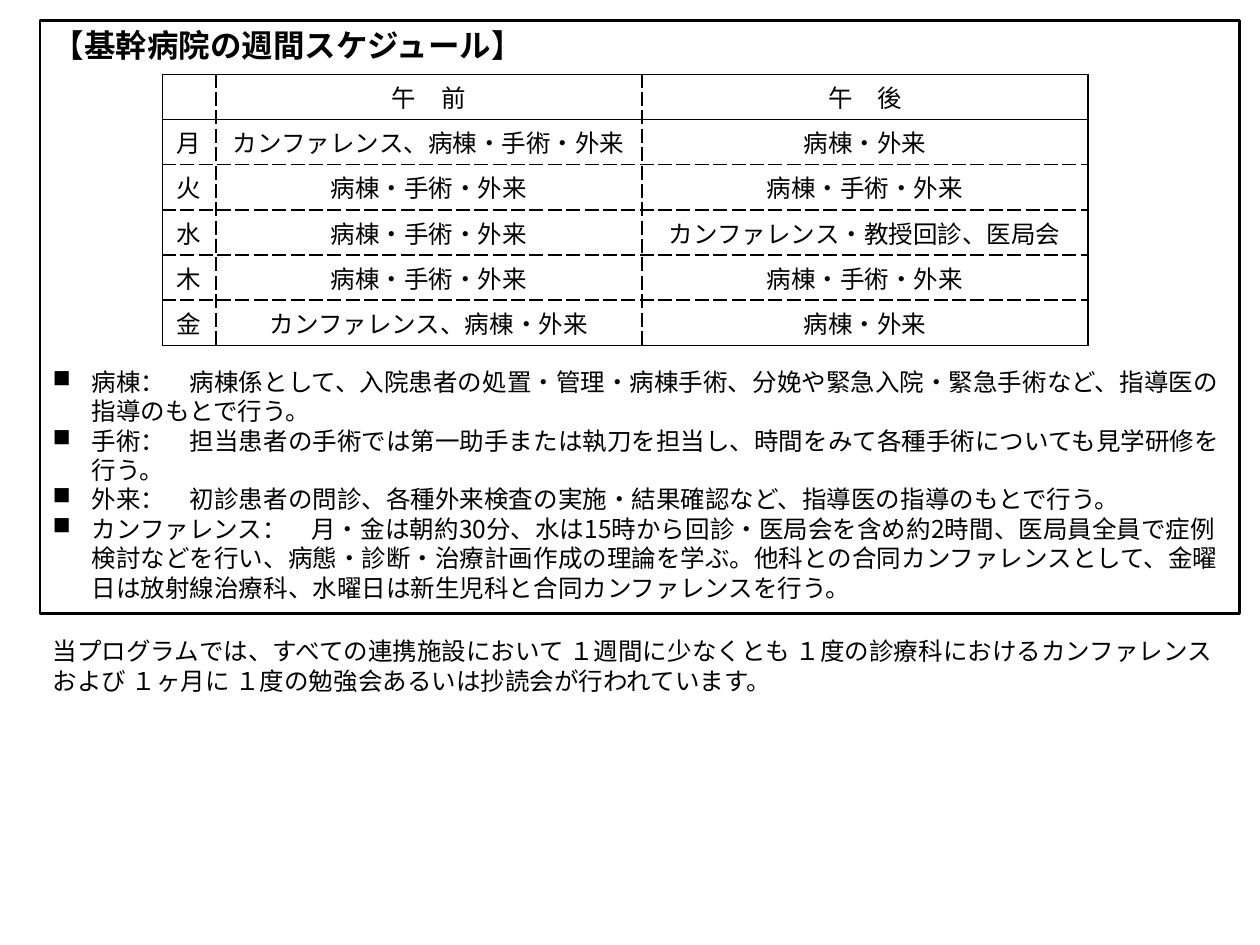
from lxml.etree import SubElement
from pptx import Presentation
from pptx.dml.color import RGBColor
from pptx.enum.shapes import MSO_SHAPE
from pptx.enum.text import MSO_ANCHOR as Anchor, PP_ALIGN as Align
from pptx.oxml.ns import qn
from pptx.util import Cm, Pt

TITLE = "【基幹病院の週間スケジュール】"
SCHEDULE = [
    ("", "午　前", "午　後"),
    ("月", "カンファレンス、病棟・手術・外来", "病棟・外来"),
    ("火", "病棟・手術・外来", "病棟・手術・外来"),
    ("水", "病棟・手術・外来", "カンファレンス・教授回診、医局会"),
    ("木", "病棟・手術・外来", "病棟・手術・外来"),
    ("金", "カンファレンス、病棟・外来", "病棟・外来"),
]
DUTIES = [
    "病棟：　病棟係として、入院患者の処置・管理・病棟手術、分娩や緊急入院・緊急手術など、指導医の指導のもとで行う。",
    "手術：　担当患者の手術では第一助手または執刀を担当し、時間をみて各種手術についても見学研修を行う。",
    "外来：　初診患者の問診、各種外来検査の実施・結果確認など、指導医の指導のもとで行う。",
    "カンファレンス：　月・金は朝約30分、水は15時から回診・医局会を含め約2時間、医局員全員で症例検討などを行い、"
    "病態・診断・治療計画作成の理論を学ぶ。他科との合同カンファレンスとして、金曜日は放射線治療科、"
    "水曜日は新生児科と合同カンファレンスを行う。",
]
CLOSING = (
    "当プログラムでは、すべての連携施設において １週間に少なくとも １度の診療科におけるカンファレンスおよび "
    "１ヶ月に １度の勉強会あるいは抄読会が行われています。"
)

COLORS = {"ink": "000000"}
FONT = "Noto Sans CJK JP"
LEFT, WIDTH = Cm(0.81), Cm(24.18)
COLUMN_WIDTHS = [Cm(1.07), Cm(8.59), Cm(8.99)]
ROW_HEIGHT = Cm(0.91)
INDENT = Cm(0.79)
TITLE_LINE, BODY_LINE = Pt(21.6), Pt(16.8)
TABLE_GAP = 8 * TITLE_LINE

FRAME_FORMAT = {"word_wrap": True, "vertical_anchor": Anchor.TOP}
CELL_FORMAT = {
    "margin_left": Cm(0.18),
    "margin_right": Cm(0.18),
    "margin_top": 0,
    "margin_bottom": 0,
    "vertical_anchor": Anchor.MIDDLE,
}
TITLE_FONT = {"name": FONT, "size": Pt(18), "bold": True}
BODY_FONT = {"name": FONT, "size": Pt(14), "bold": False}


def apply(target, values):
    for name, value in values.items():
        setattr(target, name, value)


def write(paragraph, text, font, **layout):
    apply(paragraph, {"alignment": Align.LEFT, **layout})
    apply(paragraph.font, font)
    if text:
        run = paragraph.add_run()
        run.text = text
        apply(run.font, font)
        run.font.color.rgb = RGBColor.from_string(COLORS["ink"])
        SubElement(run.font._element, qn("a:ea"), typeface=FONT)


def add_bullet(paragraph):
    properties = paragraph._p.get_or_add_pPr()
    properties.set("marL", str(INDENT))
    properties.set("indent", str(-INDENT))
    bullet = SubElement(properties, qn("a:buChar"), char="■")
    default = properties.find(qn("a:defRPr"))
    if default is not None:
        default.addprevious(bullet)


def add_border(cell, side, dash):
    line = SubElement(cell._tc.get_or_add_tcPr(), qn(f"a:ln{side}"), w=str(Pt(1)))
    fill = SubElement(line, qn("a:solidFill"))
    SubElement(fill, qn("a:srgbClr"), val=COLORS["ink"])
    SubElement(line, qn("a:prstDash"), val=dash)


def add_schedule_box(slide):
    box = slide.shapes.add_shape(MSO_SHAPE.RECTANGLE, LEFT, Cm(0.41), WIDTH, Cm(11.96))
    box.shadow.inherit = False
    box.fill.background()
    box.line.color.rgb = RGBColor.from_string(COLORS["ink"])
    box.line.width = Pt(1.5)
    frame = box.text_frame
    apply(frame, FRAME_FORMAT)
    write(frame.paragraphs[0], TITLE, TITLE_FONT, line_spacing=TITLE_LINE)
    for index, duty in enumerate(DUTIES):
        paragraph = frame.add_paragraph()
        gap = Pt(0) if index else TABLE_GAP
        write(paragraph, duty, BODY_FONT, line_spacing=BODY_LINE, space_before=gap)
        add_bullet(paragraph)


def add_schedule_table(slide):
    last_row, last_column = len(SCHEDULE) - 1, len(COLUMN_WIDTHS) - 1
    table = slide.shapes.add_table(
        len(SCHEDULE), len(COLUMN_WIDTHS), Cm(3.28), Cm(1.5),
        sum(COLUMN_WIDTHS), ROW_HEIGHT * len(SCHEDULE),
    ).table
    apply(table, {"first_row": False, "horz_banding": False})
    for column, width in zip(table.columns, COLUMN_WIDTHS):
        column.width = width
    for r, texts in enumerate(SCHEDULE):
        table.rows[r].height = ROW_HEIGHT
        for c, text in enumerate(texts):
            cell = table.cell(r, c)
            apply(cell, CELL_FORMAT)
            write(cell.text_frame.paragraphs[0], text, BODY_FONT, alignment=Align.CENTER)
            solid_sides = {
                "L": c == 0,
                "R": c == last_column,
                "T": r in (0, 1),
                "B": r in (0, last_row),
            }
            for side, solid in solid_sides.items():
                add_border(cell, side, "solid" if solid else "dash")
            cell.fill.background()


def add_closing(slide):
    frame = slide.shapes.add_textbox(LEFT, Cm(12.7), WIDTH, Cm(1.45)).text_frame
    apply(frame, FRAME_FORMAT)
    write(frame.paragraphs[0], CLOSING, BODY_FONT, line_spacing=BODY_LINE)


def main():
    presentation = Presentation()
    apply(presentation, {"slide_width": Cm(25.4), "slide_height": Cm(19.05)})
    slide = presentation.slides.add_slide(presentation.slide_layouts[6])
    add_schedule_box(slide)
    add_schedule_table(slide)
    add_closing(slide)
    presentation.save("out.pptx")


if __name__ == "__main__":
    main()
